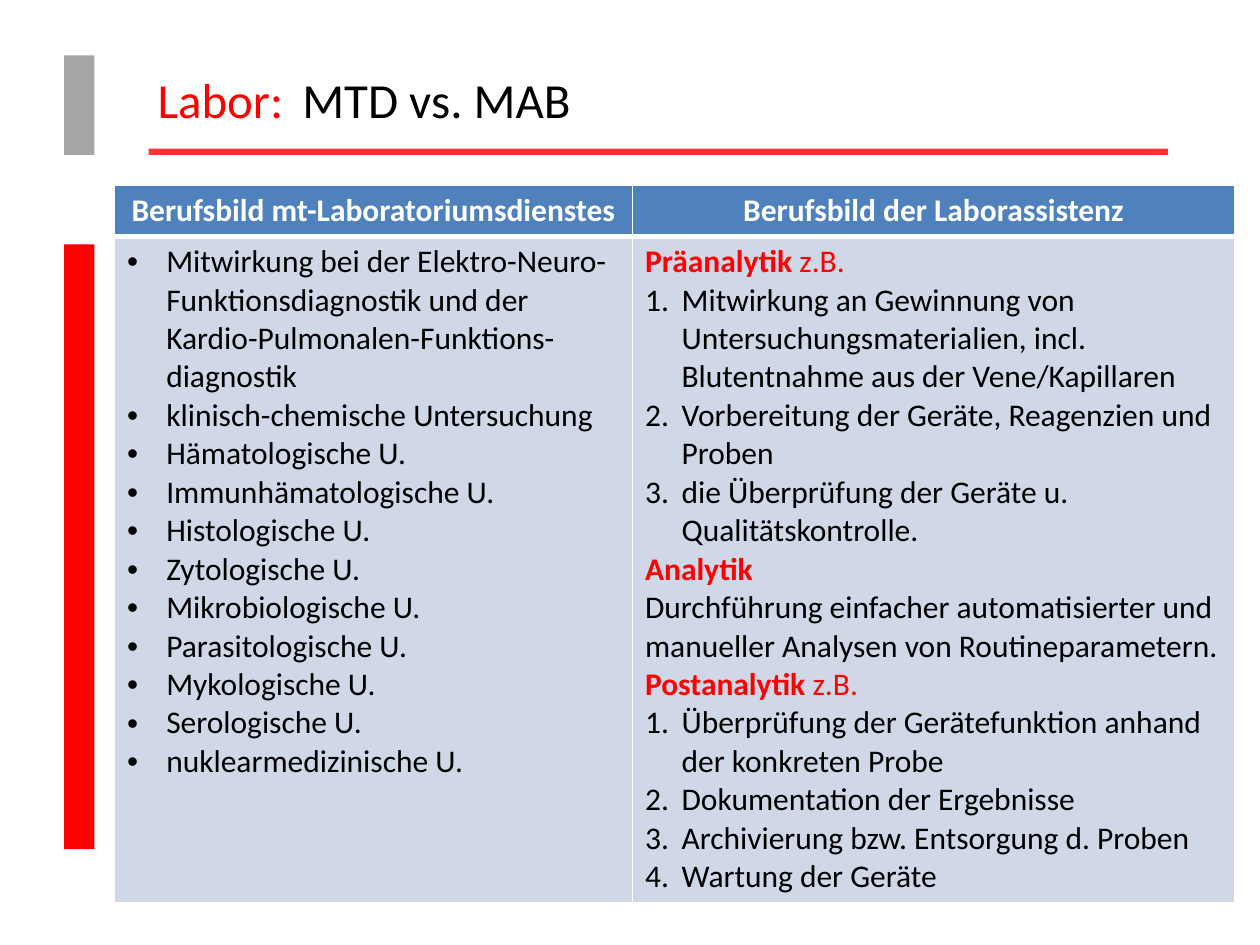
from lxml import etree
from pptx import Presentation
from pptx import util as u
from pptx.dml.color import RGBColor
from pptx.enum import shapes, text
from pptx.oxml import ns

Inches = u.Inches
COLORS = {
    "red": "FF0000", "rule": "FF3333", "grey": "A6A6A6", "black": "000000",
    "white": "FFFFFF", "header": "4F81BD", "body": "D0D8E8",
}


def add_run(paragraph, content, size=18, color="black", bold=False):
    run = paragraph.add_run()
    run.text = content
    run.font.name = "Calibri"
    run.font.size = u.Pt(size)
    run.font.bold = bold
    run.font.color.rgb = RGBColor.from_string(COLORS[color])


def hang(paragraph, indent, bullet=None):
    props = paragraph._p.get_or_add_pPr()
    props.set("marL", str(Inches(indent)))
    props.set("indent", str(-Inches(indent)))
    if bullet:
        etree.SubElement(props, ns.qn("a:buFont"), typeface="Arial")
        etree.SubElement(props, ns.qn("a:buChar"), char=bullet)


prs = Presentation()
prs.slide_width, prs.slide_height = Inches(10), Inches(7.5)
slide = prs.slides.add_slide(prs.slide_layouts[5])

# Side bars and rule under the title
for left, top, width, height, color in [
    (0.51, 0.44, 0.24, 0.79, "grey"),
    (0.51, 1.94, 0.24, 4.8, "red"),
    (1.18, 1.18, 8.09, 0.05, "rule"),
]:
    bar = slide.shapes.add_shape(shapes.MSO_SHAPE.RECTANGLE, Inches(left), Inches(top),
                                 Inches(width), Inches(height))
    bar.shadow.inherit = False
    bar.fill.solid()
    bar.fill.fore_color.rgb = RGBColor.from_string(COLORS[color])
    bar.line.fill.background()

# Title, with a tab stop between its two parts
title = slide.shapes.title
title.left, title.top, title.width, title.height = map(Inches, (1.15, 0.48, 6.85, 0.61))
title.text_frame.vertical_anchor = text.MSO_ANCHOR.MIDDLE
heading = title.text_frame.paragraphs[0]
heading.alignment = text.PP_ALIGN.LEFT
tabs = etree.SubElement(heading._p.get_or_add_pPr(), ns.qn("a:tabLst"))
etree.SubElement(tabs, ns.qn("a:tab"), pos=str(Inches(1.15)), algn="l")
add_run(heading, "Labor:\t", size=28, color="red")
add_run(heading, "MTD vs. MAB", size=28)

# Comparison table
comparison = slide.shapes.add_table(2, 2, Inches(0.91), Inches(1.47),
                                    Inches(8.89), Inches(5.69)).table
comparison.horz_banding = False
for column, width in zip(comparison.columns, (4.11, 4.78)):
    column.width = Inches(width)
for row, height in zip(comparison.rows, (0.4, 5.29)):
    row.height = Inches(height)

# Cell borders and fills: a thick line parts header and body
for row_index, row in enumerate(comparison.rows):
    for cell in row.cells:
        props = cell._tc.get_or_add_tcPr()
        for side in ("lnL", "lnR", "lnT", "lnB"):
            thick = (row_index, side) in ((0, "lnB"), (1, "lnT"))
            border = etree.SubElement(props, ns.qn(f"a:{side}"), w=str(u.Pt(3 if thick else 1)))
            fill = etree.SubElement(border, ns.qn("a:solidFill"))
            etree.SubElement(fill, ns.qn("a:srgbClr"), val=COLORS["white"])
        cell.fill.solid()
        cell.fill.fore_color.rgb = RGBColor.from_string(COLORS["body" if row_index else "header"])

# Header row
for column, label in enumerate(["Berufsbild mt-Laboratoriumsdienstes",
                                "Berufsbild der Laborassistenz"]):
    paragraph = comparison.cell(0, column).text_frame.paragraphs[0]
    paragraph.alignment = text.PP_ALIGN.CENTER
    add_run(paragraph, label, color="white", bold=True)

# Left column: bulleted duties
duties = [
    "Mitwirkung bei der Elektro-Neuro-Funktionsdiagnostik und der "
    "Kardio-Pulmonalen-Funktions-diagnostik",
    "klinisch-chemische Untersuchung",
    "Hämatologische U.",
    "Immunhämatologische U.",
    "Histologische U.",
    "Zytologische U.",
    "Mikrobiologische U.",
    "Parasitologische U.",
    "Mykologische U.",
    "Serologische U.",
    "nuklearmedizinische U.",
]
duties_frame = comparison.cell(1, 0).text_frame
for index, duty in enumerate(duties):
    paragraph = duties_frame.add_paragraph() if index else duties_frame.paragraphs[0]
    hang(paragraph, 0.31, bullet="•")
    add_run(paragraph, duty)

# Right column: phases, each with numbered steps or a plain sentence
phases = [
    ("Präanalytik", " z.B.", [
        "1.\tMitwirkung an Gewinnung von Untersuchungsmaterialien, incl. "
        "Blutentnahme aus der Vene/Kapillaren",
        "2.\tVorbereitung der Geräte, Reagenzien und Proben",
        "3.\tdie Überprüfung der Geräte u. Qualitätskontrolle.",
    ]),
    ("Analytik", "", [
        "Durchführung einfacher automatisierter und manueller Analysen von Routineparametern.",
    ]),
    ("Postanalytik", " z.B.", [
        "1.\tÜberprüfung der Gerätefunktion anhand der konkreten Probe",
        "2.\tDokumentation der Ergebnisse",
        "3.\tArchivierung bzw. Entsorgung d. Proben",
        "4.\tWartung der Geräte",
    ]),
]
phases_frame = comparison.cell(1, 1).text_frame
for index, (phase, suffix, steps) in enumerate(phases):
    paragraph = phases_frame.add_paragraph() if index else phases_frame.paragraphs[0]
    add_run(paragraph, phase, color="red", bold=True)
    if suffix:
        add_run(paragraph, suffix, color="red")
    for step in steps:
        paragraph = phases_frame.add_paragraph()
        if "\t" in step:
            hang(paragraph, 0.29)
        add_run(paragraph, step)

prs.save("out.pptx")
